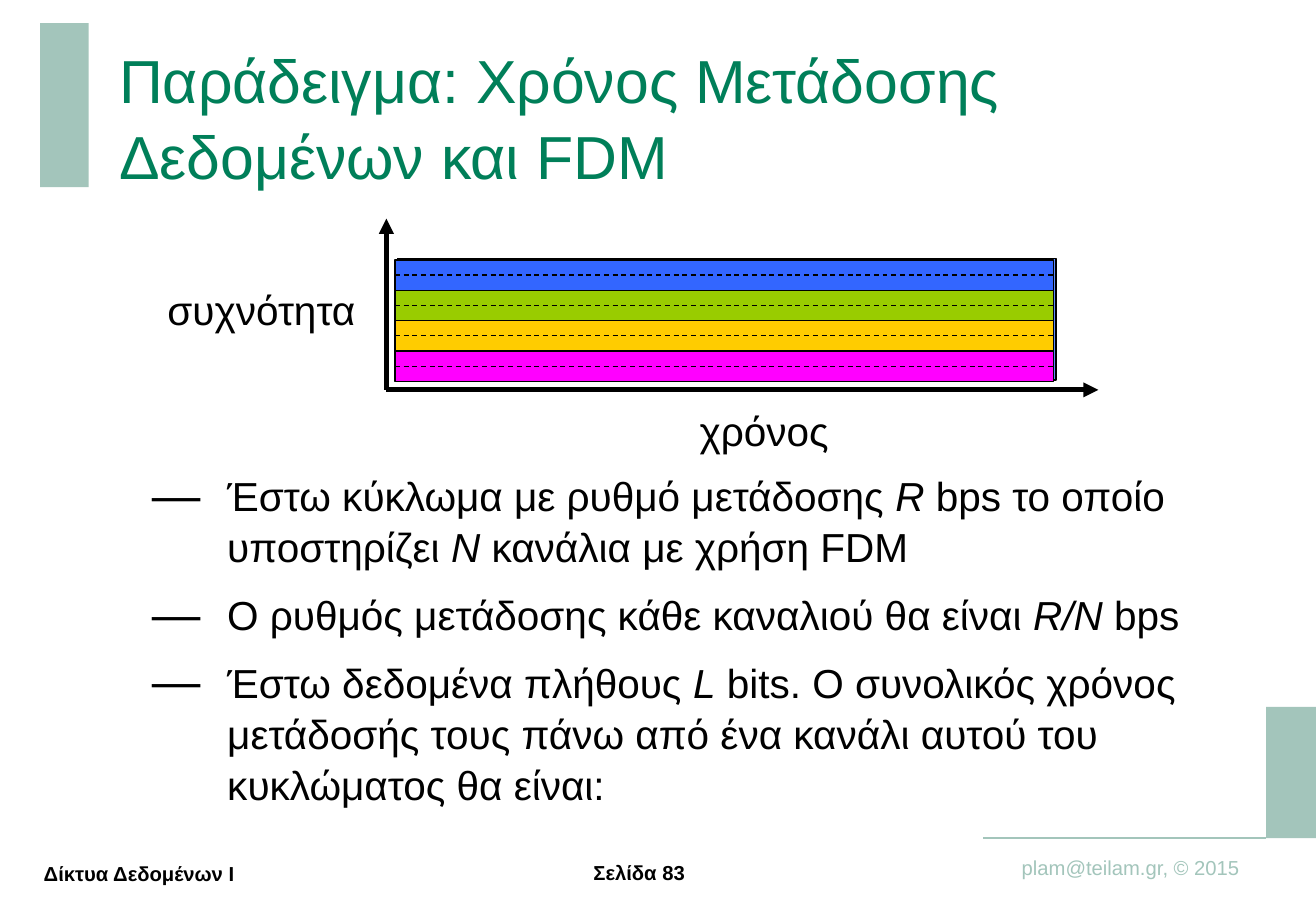
from lxml import etree
from pptx import Presentation
from pptx.dml.color import RGBColor
from pptx.enum.dml import MSO_LINE
from pptx.enum.shapes import MSO_CONNECTOR, MSO_SHAPE
from pptx.enum.text import MSO_ANCHOR, PP_ALIGN
from pptx.oxml.ns import qn
from pptx.util import Emu, Pt

EMU_PER_PX = 9144
BLACK = "000000"
SAGE = "A3C5BB"
GREEN = "007F59"
BAND_COLORS = ["3366FF", "99CC00", "FFCC00", "FF00FF"]
BAND_LEFT, BAND_TOP, BAND_WIDTH, BAND_HEIGHT = 325, 214, 542, 25
BULLETS = [
    [("Έστω κύκλωμα με ρυθμό μετάδοσης ", False), ("R", True),
     (" bps το οποίο υποστηρίζει ", False), ("N ", True),
     ("κανάλια με χρήση FDM", False)],
    [("Ο ρυθμός μετάδοσης κάθε καναλιού θα είναι ", False),
     ("R/N", True), (" bps", False)],
    [("Έστω δεδομένα πλήθους ", False), ("L", True),
     (" bits. Ο συνολικός χρόνος μετάδοσής τους πάνω από ένα κανάλι "
      "αυτού του κυκλώματος θα είναι:", False)],
]


def px(value):
    return Emu(value * EMU_PER_PX)


def color(value):
    return RGBColor.from_string(value)


def apply_format(target, values):
    for name, value in values.items():
        setattr(target, name, value)


def add_block(slide, left, top, width, height, fill, outline=None):
    shape = slide.shapes.add_shape(
        MSO_SHAPE.RECTANGLE, px(left), px(top), px(width), px(height))
    shape.shadow.inherit = False
    shape.fill.solid()
    shape.fill.fore_color.rgb = color(fill)
    if outline:
        shape.line.color.rgb = color(outline)
        shape.line.width = Pt(0.75)
    else:
        shape.line.fill.background()
    return shape


def add_line(slide, start, end, stroke=BLACK, width=0.75, dashed=False, arrow=False):
    connector = slide.shapes.add_connector(
        MSO_CONNECTOR.STRAIGHT, *[px(value) for value in (*start, *end)])
    connector.line.color.rgb = color(stroke)
    connector.line.width = Pt(width)
    if dashed:
        connector.line.dash_style = MSO_LINE.DASH
    if arrow:
        line = connector.line._get_or_add_ln()
        etree.SubElement(line, qn("a:tailEnd"), type="triangle")
    etree.SubElement(connector._element.spPr, qn("a:effectLst"))
    return connector


def add_text_frame(slide, left, top, width, height, frame_format):
    box = slide.shapes.add_textbox(px(left), px(top), px(width), px(height))
    apply_format(box.text_frame, frame_format)
    return box.text_frame


def add_text(slide, left, top, width, height, text, size, stroke=BLACK,
             bold=False, frame_format=None, paragraph_format=None):
    frame = add_text_frame(slide, left, top, width, height, frame_format or {})
    paragraph = frame.paragraphs[0]
    paragraph.text = text
    apply_format(paragraph, paragraph_format or {})
    apply_format(paragraph.font, {"name": "Arial", "size": Pt(size), "bold": bold})
    paragraph.font.color.rgb = color(stroke)


def add_bullet(paragraph):
    properties = paragraph._p.get_or_add_pPr()
    properties.set("marL", str(px(62)))
    properties.set("indent", str(px(-62)))
    bullet_color = etree.SubElement(properties, qn("a:buClr"))
    etree.SubElement(bullet_color, qn("a:srgbClr"), val=BLACK)
    etree.SubElement(properties, qn("a:buSzPct"), val="120000")
    etree.SubElement(properties, qn("a:buFont"), typeface="Arial")
    etree.SubElement(properties, qn("a:buChar"), char="—")


def add_bullets(slide):
    frame = add_text_frame(slide, 125, 381, 911, 286, {
        "word_wrap": True, "margin_left": 0, "margin_right": 0})
    for index, parts in enumerate(BULLETS):
        paragraph = frame.add_paragraph() if index else frame.paragraphs[0]
        add_bullet(paragraph)
        apply_format(paragraph, {
            "line_spacing": 1.05, "space_after": Pt(3.5),
            "space_before": Pt(6.5 if index else 0)})
        apply_format(paragraph.font, {"name": "Arial", "size": Pt(24)})
        for text, italic in parts:
            run = paragraph.add_run()
            run.text = text
            apply_format(run.font, {"name": "Arial", "size": Pt(24), "italic": italic})
            run.font.color.rgb = color(BLACK)


def add_frame(slide):
    add_block(slide, 33, 19, 40, 135, SAGE)
    add_block(slide, 1042, 582, 41, 108, SAGE)
    add_line(slide, (809, 690), (1042, 690), SAGE, 1)
    centered = {"alignment": PP_ALIGN.CENTER}
    add_text(slide, 475, 708, 102, 20, "Σελίδα 83", 12, bold=True, frame_format={
        "word_wrap": True, "vertical_anchor": MSO_ANCHOR.MIDDLE, "margin_left": 0,
        "margin_right": 0, "margin_top": 0, "margin_bottom": 0},
        paragraph_format=centered)
    add_text(slide, 831, 699, 201, 30, "plam@teilam.gr, © 2015", 12, SAGE,
             frame_format={"word_wrap": False})
    add_text(slide, 22, 690, 185, 58, "Δίκτυα Δεδομένων Ι", 12, bold=True, frame_format={
        "word_wrap": False, "vertical_anchor": MSO_ANCHOR.MIDDLE},
        paragraph_format=centered)


def add_diagram(slide):
    origin = (318, 321)
    add_line(slide, origin, (318, 180), width=3, arrow=True)
    add_line(slide, origin, (904, 321), width=3, arrow=True)
    add_text(slide, 128, 230, 176, 50, "συχνότητα", 24, frame_format={"word_wrap": False})
    add_text(slide, 566, 329, 127, 50, "χρόνος", 24, frame_format={"word_wrap": False})
    add_block(slide, 327, 213, BAND_WIDTH, 100, "618FFD", BLACK)
    right = BAND_LEFT + BAND_WIDTH
    for index, fill in enumerate(BAND_COLORS):
        top = BAND_TOP + index * BAND_HEIGHT
        middle = top + BAND_HEIGHT // 2
        band = add_block(slide, BAND_LEFT, top, BAND_WIDTH, BAND_HEIGHT, fill, BLACK)
        if index:
            add_line(slide, (BAND_LEFT, top), (right, top))
        divider = add_line(slide, (BAND_LEFT, middle), (right, middle), dashed=True)
        divider.begin_connect(band, 1)
        divider.end_connect(band, 3)


def main():
    presentation = Presentation()
    presentation.slide_width = px(1083)
    presentation.slide_height = px(750)
    slide = presentation.slides.add_slide(presentation.slide_layouts[6])
    add_frame(slide)
    add_text(slide, 98, 38, 943, 125, "Παράδειγμα: Χρόνος Μετάδοσης Δεδομένων και FDM",
             36, GREEN, frame_format={
                 "word_wrap": True, "vertical_anchor": MSO_ANCHOR.BOTTOM,
                 "margin_left": 0, "margin_right": 0},
             paragraph_format={"line_spacing": 1.05})
    add_bullets(slide)
    add_diagram(slide)
    presentation.save("out.pptx")


if __name__ == "__main__":
    main()
